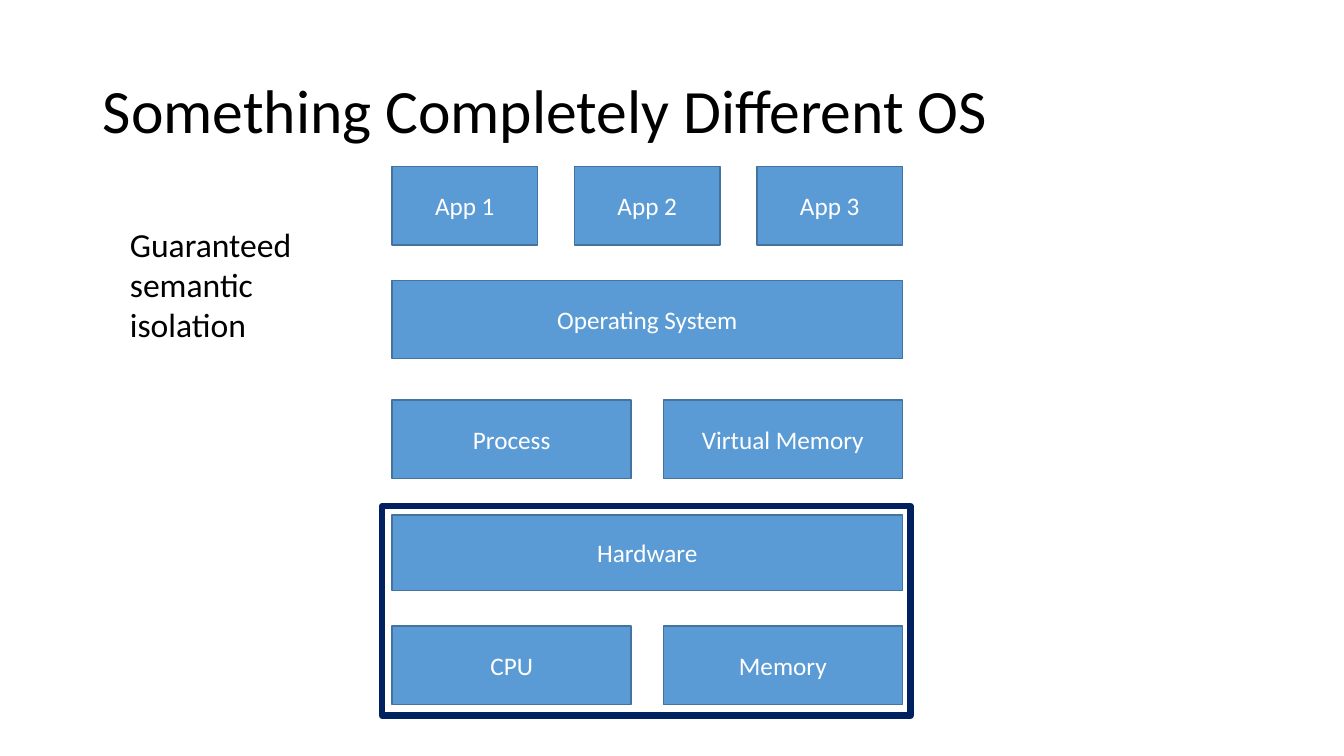
import dataclasses

import pptx
import pptx.dml.color
import pptx.enum.shapes
import pptx.enum.text
import pptx.shapes.autoshape
import pptx.slide
import pptx.text.text
import pptx.util

Inches = pptx.util.Inches
Pt = pptx.util.Pt
ALIGN = pptx.enum.text.PP_ALIGN
ANCHOR = pptx.enum.text.MSO_ANCHOR
COLORS = {
    "text": "000000",
    "label": "FFFFFF",
    "block": "5B9BD5",
    "edge": "43739E",
    "frame": "002060",
}
FONT = "Calibri"
STACK_LEFT = 3.89
STACK_WIDTH = 5.06


@dataclasses.dataclass
class Layer:
    """One row of equal blocks spanning the stack."""
    labels: list[str]
    top: float
    height: float = 0.78
    gap: float = 0.0


LAYERS = [
    Layer(["App 1", "App 2", "App 3"], 1.65, gap=0.37),
    Layer(["Operating System"], 2.78),
    Layer(["Process", "Virtual Memory"], 3.97, gap=0.32),
    Layer(["Hardware"], 5.11, height=0.75),
    Layer(["CPU", "Memory"], 6.21, gap=0.32),
]


def rgb(name: str) -> pptx.dml.color.RGBColor:
    return pptx.dml.color.RGBColor.from_string(COLORS[name])


def write(frame: pptx.text.text.TextFrame, text: str, size: float, color: str,
          align: ALIGN, anchor: ANCHOR) -> pptx.text.text._Paragraph:
    frame.word_wrap = True
    frame.vertical_anchor = anchor
    para = frame.paragraphs[0]
    para.alignment = align
    span = para.add_run()
    span.text = text
    span.font.name = FONT
    span.font.size = Pt(size)
    span.font.color.rgb = rgb(color)
    return para


def add_rectangle(page: pptx.slide.Slide, left: float, top: float, width: float,
                  height: float, line: str, weight: float) -> pptx.shapes.autoshape.Shape:
    box = page.shapes.add_shape(
        pptx.enum.shapes.MSO_SHAPE.RECTANGLE,
        Inches(left), Inches(top), Inches(width), Inches(height))
    box.shadow.inherit = False
    box.line.color.rgb = rgb(line)
    box.line.width = Pt(weight)
    return box


def add_layer(page: pptx.slide.Slide, layer: Layer) -> None:
    count = len(layer.labels)
    width = (STACK_WIDTH - layer.gap * (count - 1)) / count
    for index, label in enumerate(layer.labels):
        left = STACK_LEFT + index * (width + layer.gap)
        box = add_rectangle(page, left, layer.top, width, layer.height, "edge", 1)
        box.fill.solid()
        box.fill.fore_color.rgb = rgb("block")
        write(box.text_frame, label, 18, "label", ALIGN.CENTER, ANCHOR.MIDDLE)


def main() -> None:
    deck = pptx.Presentation()
    deck.slide_width = Inches(13.33)
    deck.slide_height = Inches(7.5)
    page = deck.slides.add_slide(deck.slide_layouts.get_by_name("Title Only"))

    # Title
    title = page.shapes.title
    title.left, title.top = Inches(0.92), Inches(0.4)
    title.width, title.height = Inches(11.5), Inches(1.45)
    title.text_frame.auto_size = pptx.enum.text.MSO_AUTO_SIZE.NONE
    para = write(title.text_frame, "Something Completely Different OS", 44, "text",
                 ALIGN.LEFT, ANCHOR.MIDDLE)
    para.line_spacing = 0.9

    # System stack
    for layer in LAYERS:
        add_layer(page, layer)

    # Side note
    note = page.shapes.add_textbox(Inches(1.19), Inches(2.17), Inches(2.43), Inches(1.31))
    write(note.text_frame, "Guaranteed semantic isolation", 24, "text",
          ALIGN.LEFT, ANCHOR.TOP)
    note.text_frame.auto_size = pptx.enum.text.MSO_AUTO_SIZE.SHAPE_TO_FIT_TEXT

    # Frame around the hardware layers
    frame = add_rectangle(page, 3.79, 5.02, 5.24, 2.08, "frame", 4.5)
    frame.fill.background()

    deck.save("out.pptx")


if __name__ == "__main__":
    main()
